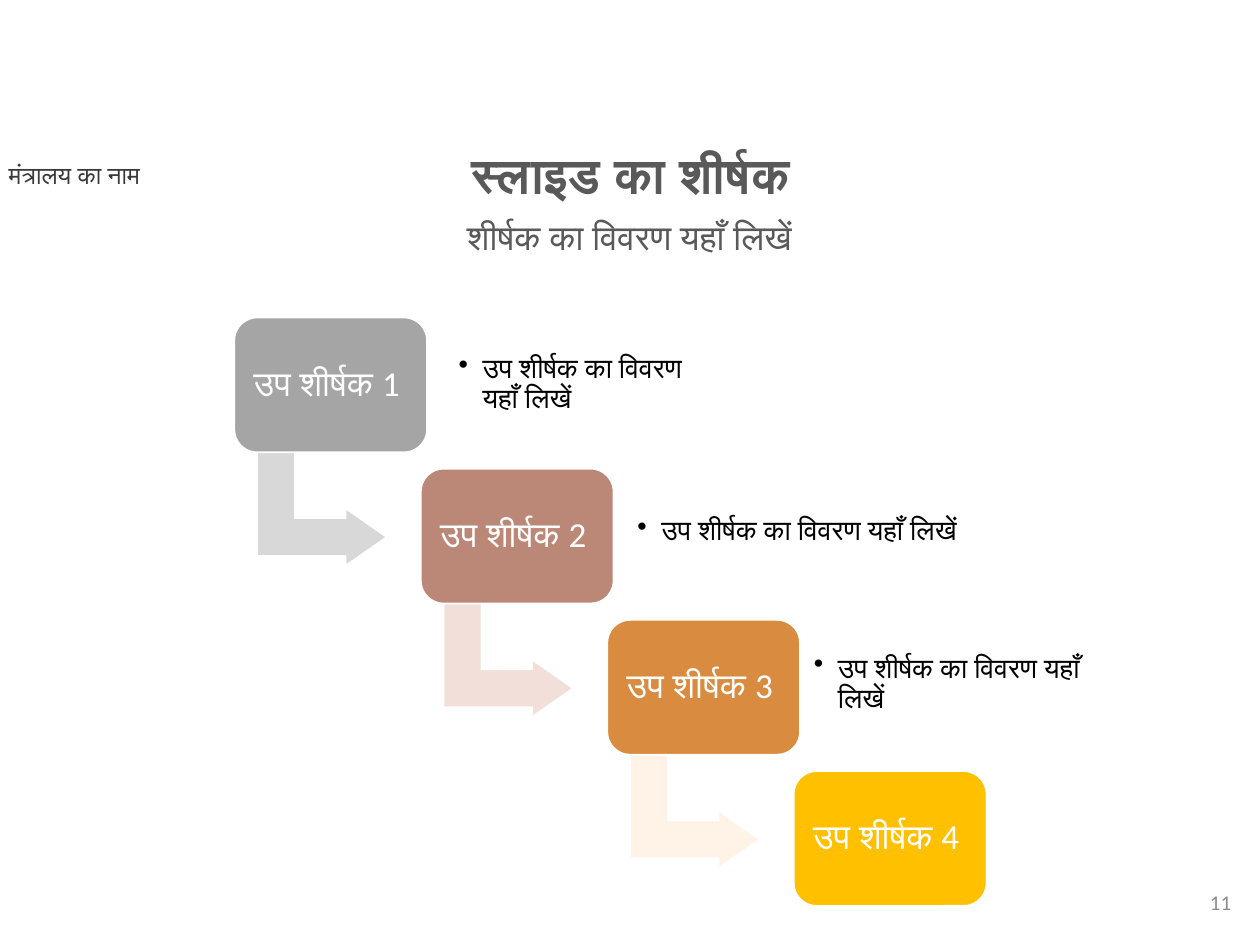
from pptx import Presentation
from pptx.dml.color import RGBColor
from pptx.enum.shapes import MSO_SHAPE
from pptx.enum.text import MSO_ANCHOR, MSO_AUTO_SIZE, PP_ALIGN
from pptx.oxml.ns import qn
from pptx.util import Inches, Pt

TOP, MIDDLE = MSO_ANCHOR.TOP, MSO_ANCHOR.MIDDLE
LEFT, CENTER, RIGHT = PP_ALIGN.LEFT, PP_ALIGN.CENTER, PP_ALIGN.RIGHT
ROUNDED, BENT_ARROW = MSO_SHAPE.ROUNDED_RECTANGLE, MSO_SHAPE.BENT_UP_ARROW
FIXED_SIZE = MSO_AUTO_SIZE.NONE

WHITE = RGBColor(0xFF, 0xFF, 0xFF)
BLACK = RGBColor(0x00, 0x00, 0x00)
HEADING_GRAY = RGBColor(0x59, 0x59, 0x59)
MINISTRY_GRAY = RGBColor(0x3B, 0x38, 0x38)
NUMBER_GRAY = RGBColor(0x8C, 0x8C, 0x8C)
GRAY, PALE_GRAY = RGBColor(0xA5, 0xA5, 0xA5), RGBColor(0xD8, 0xD8, 0xD8)
ROSE, PALE_ROSE = RGBColor(0xBB, 0x87, 0x76), RGBColor(0xF2, 0xDF, 0xD9)
ORANGE, PALE_ORANGE = RGBColor(0xD9, 0x8C, 0x3F), RGBColor(0xFF, 0xF2, 0xE7)
GOLD = RGBColor(0xFF, 0xC0, 0x00)

TITLE_ONLY = 5
COLUMNS, ROWS = 100, 75
STEP_LEFT, STEP_TOP = 18.6, 25.2
STEP_ACROSS, STEP_DOWN = 14.8, 12
DETAIL = "उप शीर्षक का विवरण यहाँ लिखें"

# Step fill, arrow fill, and the detail text's left, top and width
STEPS = [
    (GRAY, PALE_GRAY, (35.6, 26.2, 20.1)),
    (ROSE, PALE_ROSE, (49.8, 37.9, 29.6)),
    (ORANGE, PALE_ORANGE, (63.8, 50, 24.7)),
    (GOLD, None, None),
]


class SlideBuilder:
    """Draws on one slide; lengths are columns and rows of a 100 by 75 grid."""

    font_name = "Calibri"
    tight_margin = Inches(0.08)

    def __init__(self, deck):
        self.column = deck.slide_width / COLUMNS
        self.row = deck.slide_height / ROWS
        self.slide = deck.slides.add_slide(deck.slide_layouts[TITLE_ONLY])

    def area(self, left, top, width, height):
        return (int(left * self.column), int(top * self.row),
                int(width * self.column), int(height * self.row))

    def fill_text(self, box, text, size, color, align=LEFT, anchor=TOP,
                  bold=False, spacing=None, tight=False, bullet=False):
        frame = box.text_frame
        frame.word_wrap = True
        frame.auto_size = FIXED_SIZE
        frame.vertical_anchor = anchor
        if tight:
            frame.margin_left = frame.margin_right = self.tight_margin
            frame.margin_top = frame.margin_bottom = self.tight_margin
        para = frame.paragraphs[0]
        if bullet:
            self.add_bullet(para)
        para.alignment = align
        para.line_spacing = spacing
        span = para.add_run()
        span.text = text
        span.font.name = self.font_name
        span.font.size = Pt(size)
        span.font.bold = bold
        span.font.color.rgb = color

    def add_bullet(self, para):
        properties = para._p.get_or_add_pPr()
        indent = Inches(0.19)
        properties.set("marL", str(indent))
        properties.set("indent", str(-indent))
        mark = properties.makeelement(qn("a:buChar"), {"char": "•"})
        properties.append(mark)

    def title(self, area, text, **style):
        box = self.slide.shapes.title
        box.left, box.top, box.width, box.height = self.area(*area)
        self.fill_text(box, text, **style)

    def text(self, area, text, **style):
        box = self.slide.shapes.add_textbox(*self.area(*area))
        self.fill_text(box, text, **style)

    def shape(self, kind, area, fill, adjustments):
        shape = self.slide.shapes.add_shape(kind, *self.area(*area))
        shape.shadow.inherit = False
        shape.fill.solid()
        shape.fill.fore_color.rgb = fill
        shape.line.color.rgb = WHITE
        shape.line.width = Pt(1)
        for index, value in enumerate(adjustments):
            shape.adjustments[index] = value
        return shape

    def arrow(self, left, top, fill):
        arrow = self.shape(BENT_ARROW, (left, top, 9.1, 10.3), fill,
                           (0.33, 0.25, 0.36))
        arrow.rotation = 90

    def step(self, left, top, label, fill):
        box = self.shape(ROUNDED, (left, top, 15.3, 10.7), fill, (0.17,))
        self.fill_text(box, label, size=20, color=WHITE, align=CENTER,
                       anchor=MIDDLE, spacing=0.9, tight=True)

    def detail(self, left, top, width):
        self.text((left, top, width, 8.6), DETAIL, size=16, color=BLACK,
                  anchor=MIDDLE, spacing=0.9, tight=True, bullet=True)


def main():
    deck = Presentation()
    deck.slide_width, deck.slide_height = Inches(10), Inches(7.5)
    page = SlideBuilder(deck)

    page.text((-0.3, 12.2, 21.8, 3.4), "मंत्रालय का नाम", size=14,
              color=MINISTRY_GRAY)
    page.text((76.2, 69.6, 22.5, 4), "11", size=12, color=NUMBER_GRAY,
              align=RIGHT, anchor=MIDDLE)
    page.text((14.6, 17, 70.7, 6.3), "शीर्षक का विवरण यहाँ लिखें", size=20,
              color=HEADING_GRAY, align=CENTER, spacing=0.9)
    page.title((18.6, 11.5, 62.9, 4.7), "स्लाइड का शीर्षक", size=28,
               color=HEADING_GRAY, align=CENTER, bold=True, spacing=0.9)

    for index, (fill, arrow_fill, detail_area) in enumerate(STEPS):
        left = STEP_LEFT + index * STEP_ACROSS
        top = STEP_TOP + index * STEP_DOWN
        if arrow_fill:
            page.arrow(left + 2.4, top + 10, arrow_fill)
        page.step(left, top, f"उप शीर्षक {index + 1} ", fill)
        if detail_area:
            page.detail(*detail_area)

    deck.save("out.pptx")


if __name__ == "__main__":
    main()
